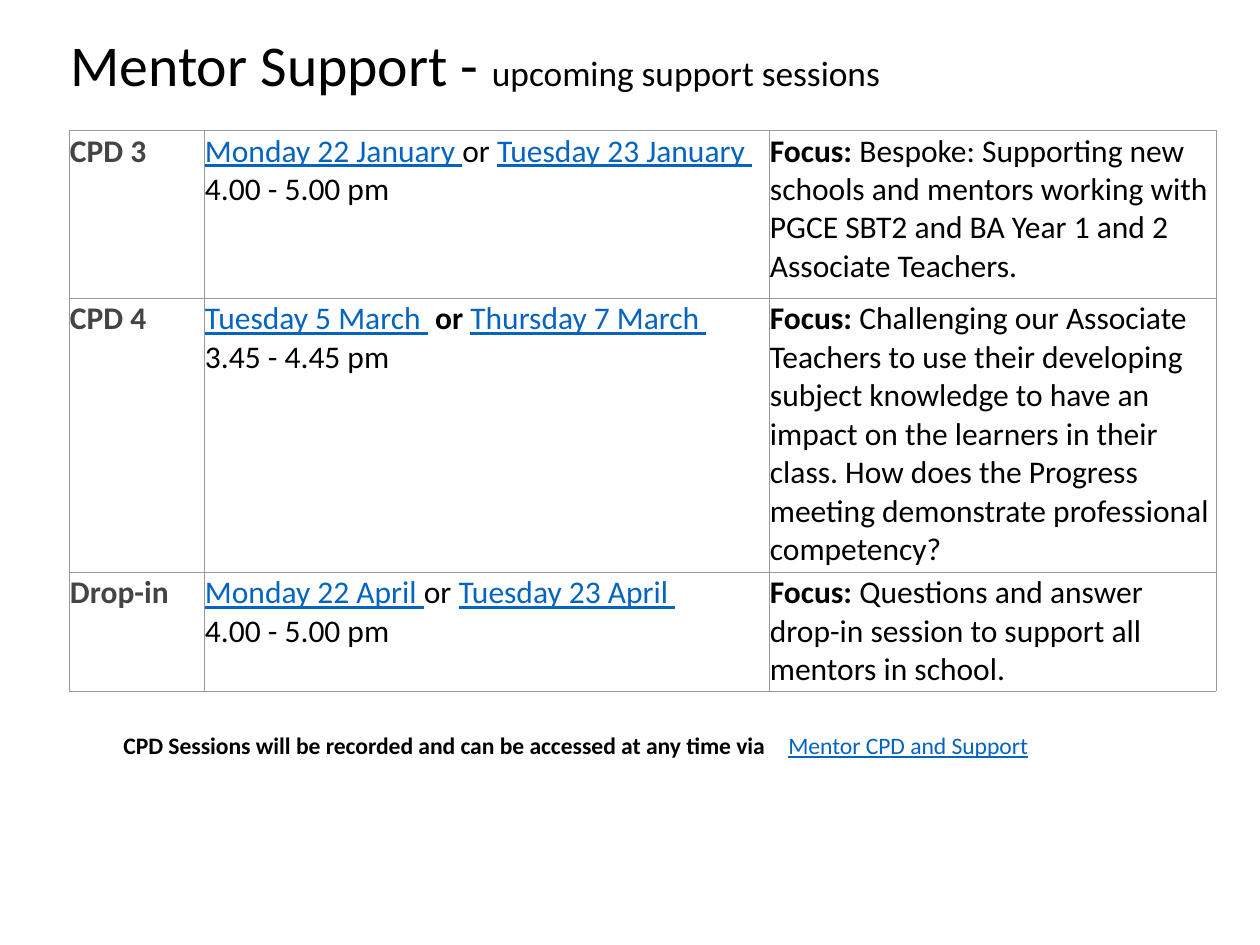
from dataclasses import dataclass

from lxml import etree
from pptx import Presentation, util as u
from pptx.dml.color import RGBColor
from pptx.enum import text
from pptx.oxml import ns


@dataclass(frozen=True)
class Theme:
    font: str = "Calibri"
    ink: str = "000000"
    label: str = "444444"
    link: str = "0563C1"
    paper: str = "FFFFFF"
    border: str = "999999"
    title: float = 33
    subtitle: float = 20.2
    body: float = 18
    note: float = 13.5


THEME = Theme()
PX = u.Inches(1) // 126

# Run formats
PLAIN = {}
BOLD = {"bold": True}
LABEL = {"bold": True, "color": THEME.label}
LINK = {"color": THEME.link, "underline": True}

# Content: a cell is a list of paragraphs, a paragraph a list of runs
TITLE = [[("Mentor Support - ", {"size": THEME.title}),
          ("upcoming support sessions", {"size": THEME.subtitle})]]
SESSIONS = [
    ("CPD 3",
     [[("Monday 22 January ", LINK), ("or ", PLAIN), ("Tuesday 23 January ", LINK)],
      [("4.00 - 5.00 pm", PLAIN)]],
     "Bespoke: Supporting new schools and mentors working with PGCE SBT2 "
     "and BA Year 1 and 2 Associate Teachers. "),
    ("CPD 4",
     [[("Tuesday 5 March ", LINK), (" ", PLAIN), ("or ", BOLD),
       ("Thursday 7 March ", LINK)],
      [("3.45 - 4.45 pm ", PLAIN)]],
     "Challenging our Associate Teachers to use their developing subject "
     "knowledge to have an impact on the learners in their class. How does the "
     "Progress meeting demonstrate professional competency?"),
    ("Drop-in",
     [[("Monday 22 April ", LINK), ("or ", PLAIN), ("Tuesday 23 April ", LINK)],
      [("4.00 - 5.00 pm ", PLAIN)]],
     "Questions and answer drop-in session to support all mentors in school. "),
]
NOTES = [
    ("CPD Sessions will be recorded and can be accessed at any time via", BOLD, 111, 823),
    ("Mentor CPD and Support", LINK, 776, 299),
]

# Layout in px
SLIDE_SIZE = (1260, 945)
TITLE_BOX = (58, 16, 907, 103)
TABLE_LEFT, TABLE_TOP = 69, 130
COLUMNS = (135, 565, 447)
ROWS = (168, 274, 119)
NOTE_TOP, NOTE_HEIGHT = 725, 42


def add_run(paragraph, words, size=THEME.body, color=THEME.ink, bold=False, underline=False):
    run = paragraph.add_run()
    run.text = words
    font = run.font
    font.name, font.size = THEME.font, u.Pt(size)
    font.bold, font.underline = bold, underline
    font.color.rgb = RGBColor.from_string(color)


def write(frame, paragraphs, line_spacing=None, **defaults):
    for index, runs in enumerate(paragraphs):
        paragraph = frame.add_paragraph() if index else frame.paragraphs[0]
        paragraph.line_spacing = line_spacing
        for words, style in runs:
            add_run(paragraph, words, **{**defaults, **style})


def add_text(slide, box, paragraphs, anchor=text.MSO_ANCHOR.TOP, **style):
    frame = slide.shapes.add_textbox(*(length * PX for length in box)).text_frame
    frame.word_wrap = True
    frame.vertical_anchor = anchor
    write(frame, paragraphs, **style)


def format_cell(cell):
    cell.margin_left = cell.margin_right = PX
    cell.margin_top = cell.margin_bottom = 2 * PX
    properties = cell._tc.get_or_add_tcPr()
    for side in ("a:lnL", "a:lnR", "a:lnT", "a:lnB"):
        line = etree.SubElement(properties, ns.qn(side), w=str(u.Pt(0.5)))
        fill = etree.SubElement(line, ns.qn("a:solidFill"))
        etree.SubElement(fill, ns.qn("a:srgbClr"), val=THEME.border)
    cell.fill.solid()
    cell.fill.fore_color.rgb = RGBColor.from_string(THEME.paper)


def add_sessions(slide):
    box = (TABLE_LEFT, TABLE_TOP, sum(COLUMNS), sum(ROWS))
    table = slide.shapes.add_table(
        len(ROWS), len(COLUMNS), *(length * PX for length in box)).table
    table.first_row = table.horz_banding = False
    for column, width in zip(table.columns, COLUMNS):
        column.width = width * PX
    for row, height, (name, dates, focus) in zip(table.rows, ROWS, SESSIONS):
        row.height = height * PX
        contents = ([[(name, LABEL)]], dates, [[("Focus: ", BOLD), (focus, PLAIN)]])
        for cell, paragraphs in zip(row.cells, contents):
            format_cell(cell)
            write(cell.text_frame, paragraphs)


def main():
    presentation = Presentation()
    presentation.slide_width, presentation.slide_height = (side * PX for side in SLIDE_SIZE)
    slide = presentation.slides.add_slide(presentation.slide_layouts[6])

    # Title, session table, footnotes
    add_text(slide, TITLE_BOX, TITLE, anchor=text.MSO_ANCHOR.MIDDLE, line_spacing=0.9)
    add_sessions(slide)
    for words, style, left, width in NOTES:
        add_text(slide, (left, NOTE_TOP, width, NOTE_HEIGHT), [[(words, style)]],
                 size=THEME.note)

    presentation.save("out.pptx")


if __name__ == "__main__":
    main()
